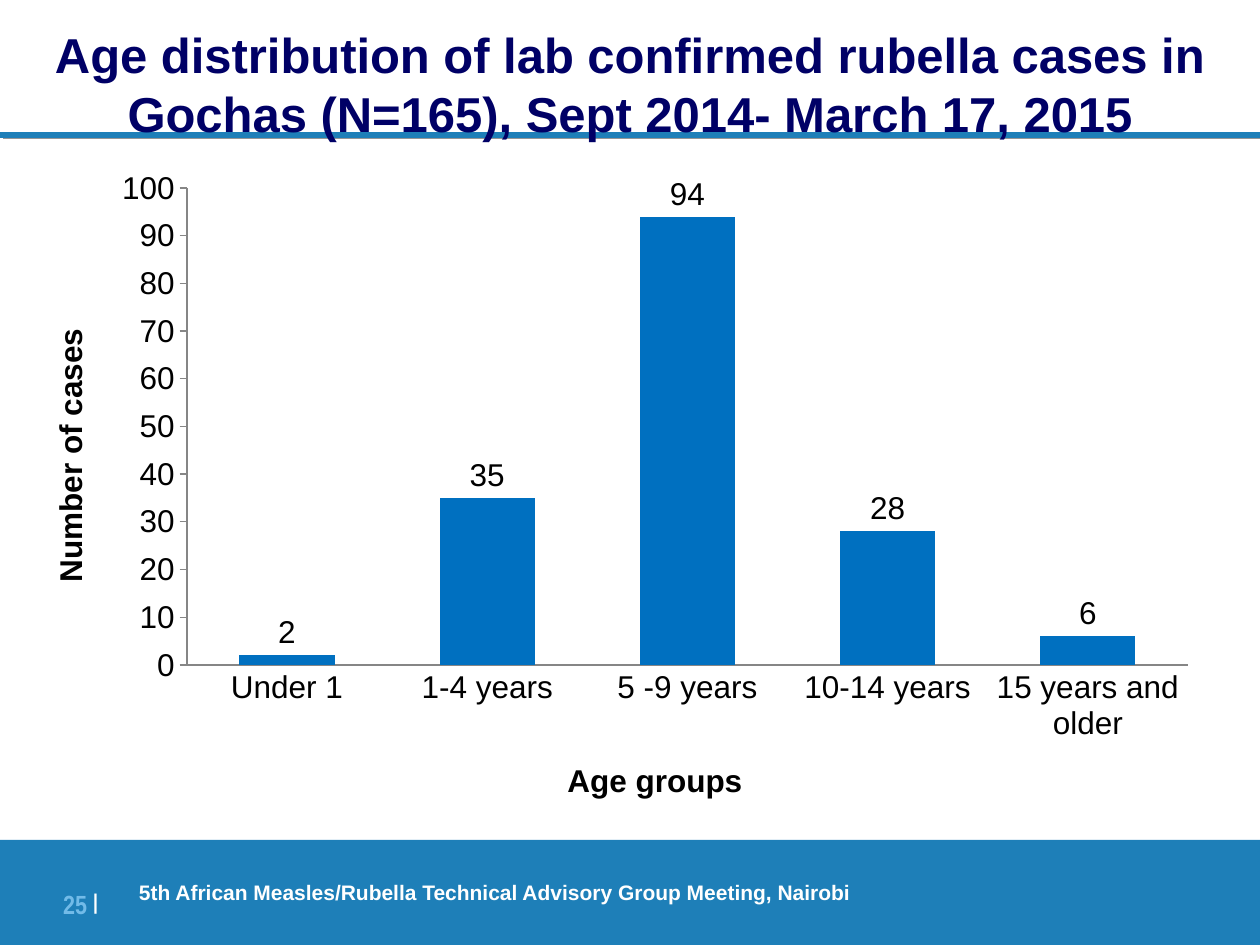
from lxml.etree import SubElement
from pptx import Presentation
from pptx.chart.data import CategoryChartData
from pptx.dml.color import RGBColor
from pptx.enum.chart import XL_CHART_TYPE, XL_LABEL_POSITION, XL_TICK_MARK
from pptx.enum.shapes import MSO_CONNECTOR, MSO_SHAPE
from pptx.enum.text import MSO_ANCHOR, PP_ALIGN
from pptx.oxml import parse_xml
from pptx.oxml.ns import nsdecls, qn
from pptx.util import Pt

EMU_PER_PX = 914400 / 126
SLIDE_WIDTH, SLIDE_HEIGHT = 1260, 945

BAND_BLUE = RGBColor(0x1E, 0x7F, 0xB8)
NUMBER_BLUE = RGBColor(0x72, 0xBB, 0xE8)
BAR_BLUE = RGBColor(0x00, 0x70, 0xC0)
TITLE_NAVY = RGBColor(0x00, 0x00, 0x66)
SHADOW_GRAY = RGBColor(0x96, 0x96, 0x96)
AXIS_GRAY = RGBColor(0x86, 0x86, 0x86)
WHITE = RGBColor(0xFF, 0xFF, 0xFF)
BLACK = RGBColor(0x00, 0x00, 0x00)

AGE_GROUPS = ["Under 1", "1-4 years", "5 -9 years", "10-14 years", "15 years and older"]
CASES = [2, 35, 94, 28, 6]


def px(length):
    """Turn pixels into EMU."""
    return round(length * EMU_PER_PX)


def scaled(box):
    """Turn a pixel box into EMU lengths."""
    return [px(length) for length in box]


def set_font(font, size, color, bold=False, name="Arial"):
    """Format a font."""
    font.name = name
    font.size = Pt(size)
    font.bold = bold
    font.color.rgb = color


def clear_margins(text_frame):
    """Remove the insets of a text frame."""
    text_frame.margin_left = text_frame.margin_right = 0
    text_frame.margin_top = text_frame.margin_bottom = 0


def make_shadow(color, distance, degrees):
    """Return an effect list that holds one outer shadow."""
    return parse_xml(
        f'<a:effectLst {nsdecls("a")}>'
        f'<a:outerShdw dist="{Pt(distance)}" dir="{degrees * 60000}" algn="ctr">'
        f'<a:srgbClr val="{color}"/></a:outerShdw></a:effectLst>'
    )


def add_rule(slide, box):
    """Draw the horizontal rule under the title."""
    left, top, width, height = scaled(box)
    rule = slide.shapes.add_connector(
        MSO_CONNECTOR.STRAIGHT, left, top, left + width, top + height
    )
    rule.line.color.rgb = BAND_BLUE
    rule.line.width = Pt(3)
    rule._element.spPr.append(make_shadow(SHADOW_GRAY, 2.2, 27))


def add_footer(slide, box):
    """Draw the footer band with the meeting name and slide number."""
    left, top, width, height = box
    band = slide.shapes.add_shape(MSO_SHAPE.RECTANGLE, *scaled(box))
    band.shadow.inherit = False
    band.fill.solid()
    band.fill.fore_color.rgb = BAND_BLUE
    band.line.fill.background()
    text_frame = band.text_frame
    text_frame.word_wrap = False
    text_frame.vertical_anchor = MSO_ANCHOR.MIDDLE
    text_frame.margin_left = px(139)
    text_frame.text = "5th African Measles/Rubella Technical Advisory Group Meeting, Nairobi"
    paragraph = text_frame.paragraphs[0]
    paragraph.alignment = PP_ALIGN.LEFT
    set_font(paragraph.runs[0].font, 12, WHITE, bold=True)

    number = slide.shapes.add_textbox(*scaled((left + 49, top + 38, 49, 45)))
    clear_margins(number.text_frame)
    number.text_frame.word_wrap = True
    paragraph = number.text_frame.paragraphs[0]
    paragraph.alignment = PP_ALIGN.RIGHT
    for text, size, color in (("25 ", 15, NUMBER_BLUE), ("|", 21, WHITE)):
        run = paragraph.add_run()
        run.text = text
        set_font(run.font, size, color, bold=True, name="Arial Narrow")
    run.font._element.set("baseline", "14000")


def place_title(slide, box):
    """Fill and format the title placeholder in front of the rule."""
    title = slide.shapes.title
    title.left, title.top, title.width, title.height = scaled(box)
    text_frame = title.text_frame
    clear_margins(text_frame)
    text_frame.word_wrap = True
    text_frame.vertical_anchor = MSO_ANCHOR.MIDDLE
    text_frame.text = (
        "Age distribution of lab confirmed rubella cases in "
        "Gochas (N=165), Sept 2014- March 17, 2015"
    )
    paragraph = text_frame.paragraphs[0]
    paragraph.alignment = PP_ALIGN.CENTER
    font = paragraph.runs[0].font
    set_font(font, 28, TITLE_NAVY, bold=True)
    font._element.find(qn("a:solidFill")).addnext(make_shadow(NUMBER_BLUE, 2, 45))
    slide.shapes._spTree.append(title._element)


def format_axis(axis, title, tick_mark):
    """Give an axis its title, line and ticks."""
    axis.has_major_gridlines = False
    axis.major_tick_mark = tick_mark
    axis.minor_tick_mark = XL_TICK_MARK.NONE
    axis.format.line.color.rgb = AXIS_GRAY
    axis.axis_title.text_frame.text = title
    run = axis.axis_title.text_frame.paragraphs[0].runs[0]
    set_font(run.font, 18, BLACK, bold=True)


def set_plot_area(chart, shares):
    """Fix the inner plot area at the given shares of the chart."""
    plot_area = chart._chartSpace.chart.plotArea
    layout = plot_area.find(qn("c:layout"))
    if layout is None:
        layout = SubElement(plot_area, qn("c:layout"))
        plot_area.insert(0, layout)
    manual = SubElement(layout, qn("c:manualLayout"))
    settings = [("layoutTarget", "inner"), ("xMode", "edge"), ("yMode", "edge")]
    for tag, value in settings + list(zip("xywh", shares)):
        SubElement(manual, qn(f"c:{tag}")).set("val", str(value))


def add_case_chart(slide, box):
    """Draw the column chart of cases by age group."""
    width, height = box[2:]
    data = CategoryChartData()
    data.categories = AGE_GROUPS
    data.add_series("Series 1", CASES)
    chart = slide.shapes.add_chart(
        XL_CHART_TYPE.COLUMN_CLUSTERED, *scaled(box), data
    ).chart
    chart.has_legend = False
    chart.has_title = False
    set_font(chart.font, 18, BLACK)

    format_axis(chart.category_axis, "Age groups", XL_TICK_MARK.NONE)
    format_axis(chart.value_axis, "Number of cases", XL_TICK_MARK.OUTSIDE)
    chart.value_axis.minimum_scale = 0
    chart.value_axis.maximum_scale = 100
    chart.value_axis.major_unit = 10

    plot = chart.plots[0]
    plot.gap_width = 110
    plot.vary_by_categories = False
    plot.series[0].format.fill.solid()
    plot.series[0].format.fill.fore_color.rgb = BAR_BLUE
    plot.has_data_labels = True
    plot.data_labels.show_value = True
    plot.data_labels.position = XL_LABEL_POSITION.OUTSIDE_END
    set_font(plot.data_labels.font, 18, BLACK)
    set_plot_area(chart, (166 / width, 31 / height, 1001 / width, 477 / height))


def main():
    """Build and save the slide."""
    presentation = Presentation()
    presentation.slide_width = px(SLIDE_WIDTH)
    presentation.slide_height = px(SLIDE_HEIGHT)
    slide = presentation.slides.add_slide(presentation.slide_layouts[5])
    add_rule(slide, (0, 135, SLIDE_WIDTH, 0))
    add_footer(slide, (0, 840, SLIDE_WIDTH, 105))
    place_title(slide, (0, 4, SLIDE_WIDTH, 158))
    add_case_chart(slide, (21, 157, 1191, 673))
    presentation.save("out.pptx")


if __name__ == "__main__":
    main()
